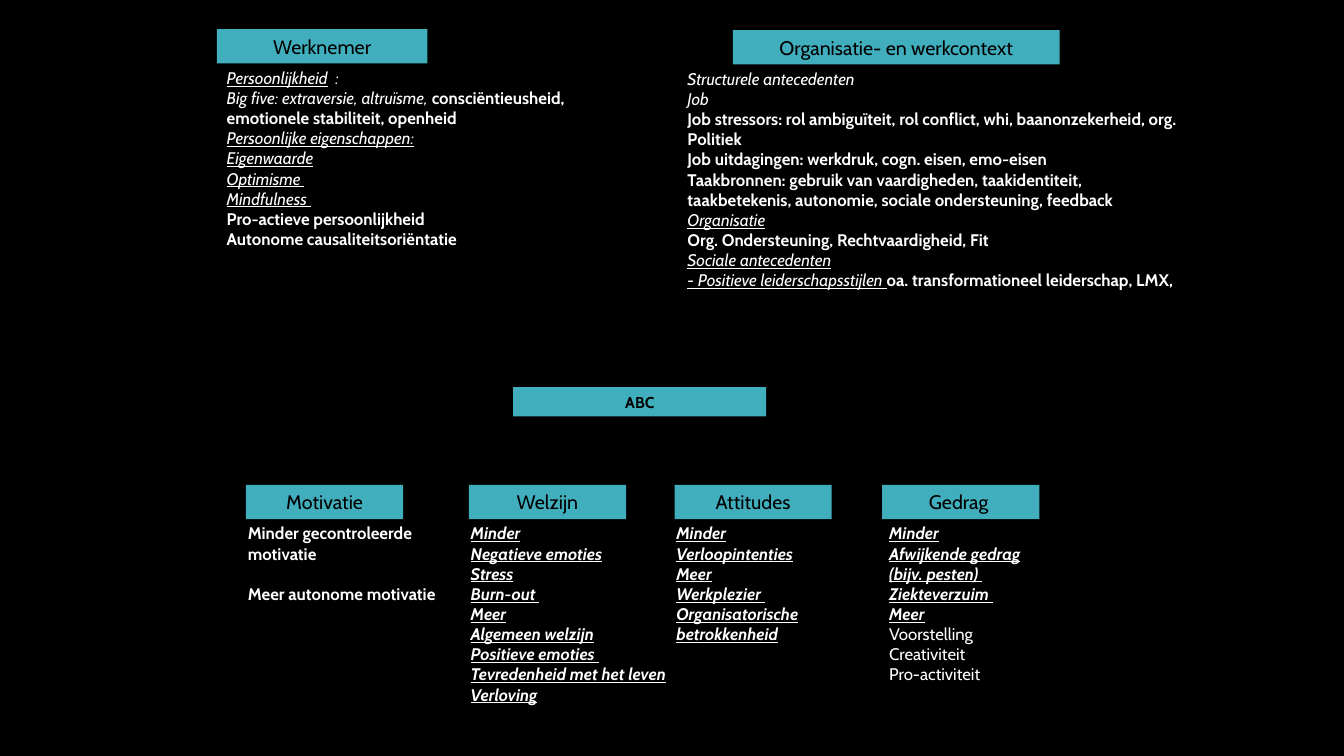
import pptx
import pptx.dml.color
import pptx.enum.shapes
import pptx.enum.text
import pptx.util

Inches = pptx.util.Inches
Pt = pptx.util.Pt

FONT = "Cabin"
BLACK, WHITE, TEAL = "000000", "FFFFFF", "41AEBD"
HEADING_HEIGHT = 0.34

ANTECEDENTS = [
    ((2.15, 0.29, 3.81, 2.45), 0, 2.09, "Werknemer", [
        [("Persoonlijkheid", "iu"), ("  :", "i")],
        [("Big five: extraversie, altruïsme, ", "i"),
         ("consciëntieusheid, emotionele stabiliteit, openheid", "b")],
        [("Persoonlijke eigenschappen:", "iu")],
        [("Eigenwaarde", "iu")],
        [("Optimisme ", "iu")],
        [("Mindfulness ", "iu")],
        [("Pro-actieve persoonlijkheid", "b")],
        [("Autonome causaliteitsoriëntatie", "b")],
    ]),
    ((6.72, 0.3, 5.11, 3.07), 0.55, 3.24, "Organisatie- en werkcontext", [
        [("Structurele antecedenten", "i")],
        [("Job", "i")],
        [("Job stressors: rol ambiguïteit, rol conflict, whi, "
          "baanonzekerheid, org. Politiek", "b")],
        [("Job uitdagingen: werkdruk, cogn. eisen, emo-eisen", "b")],
        [("Taakbronnen: gebruik van vaardigheden, taakidentiteit, "
          "taakbetekenis, autonomie, sociale ondersteuning, feedback", "b")],
        [("Organisatie", "iu")],
        [("Org. Ondersteuning, Rechtvaardigheid, Fit", "b")],
        [("Sociale antecedenten", "iu")],
        [("- Positieve leiderschapsstijlen ", "iu"),
         ("oa. transformationeel leiderschap, LMX,", "b")],
    ]),
]


def uniform(style, *lines):
    return [[(line, style)] for line in lines]


OUTCOMES = [
    ((2.36, 4.81, 2.25, 1.65), 0.08, 1.56, "Motivatie",
     uniform("b", "Minder gecontroleerde motivatie", "Meer autonome motivatie")),
    ((4.57, 4.81, 2.25, 2.45), 0.08, 1.56, "Welzijn",
     uniform("biu", "Minder", "Negatieve emoties", "Stress", "Burn-out ", "Meer",
             "Algemeen welzijn", "Positieve emoties ",
             "Tevredenheid met het leven", "Verloving")),
    ((6.61, 4.81, 1.82, 1.85), 0.08, 1.56, "Attitudes",
     uniform("biu", "Minder", "Verloopintenties", "Meer", "Werkplezier ",
             "Organisatorische betrokkenheid")),
    ((8.72, 4.81, 1.79, 2.25), 0.03, 1.56, "Gedrag ",
     uniform("biu", "Minder", "Afwijkende gedrag (bijv. pesten) ",
             "Ziekteverzuim ", "Meer")
     + uniform("", "Voorstelling", "Creativiteit", "Pro-activiteit")),
]


def rgb(value):
    return pptx.dml.color.RGBColor.from_string(value)


def add_run(paragraph, text, size, color, style=""):
    run = paragraph.add_run()
    run.text = text
    run.font.name = FONT
    run.font.size = Pt(size)
    run.font.color.rgb = rgb(color)
    run.font.bold = "b" in style
    run.font.italic = "i" in style
    run.font.underline = "u" in style


def add_heading(slide, box, text, size=14, style=""):
    heading = slide.shapes.add_shape(
        pptx.enum.shapes.MSO_SHAPE.RECTANGLE, *map(Inches, box))
    heading.shadow.inherit = False
    heading.fill.solid()
    heading.fill.fore_color.rgb = rgb(TEAL)
    heading.line.fill.background()
    heading.text_frame.word_wrap = True
    heading.text_frame.vertical_anchor = pptx.enum.text.MSO_ANCHOR.MIDDLE
    paragraph = heading.text_frame.paragraphs[0]
    paragraph.alignment = pptx.enum.text.PP_ALIGN.CENTER
    add_run(paragraph, text, size, BLACK, style)


def add_factor(slide, box, indent, heading_width, title, lines, gap=0):
    left, top, width, height = box
    body_top = top + HEADING_HEIGHT - 0.01
    add_heading(slide, (left + indent, top, heading_width, HEADING_HEIGHT), title)
    body = slide.shapes.add_textbox(
        Inches(left), Inches(body_top), Inches(width),
        Inches(height - HEADING_HEIGHT + 0.01)).text_frame
    body.word_wrap = True
    for index, line in enumerate(lines):
        paragraph = body.add_paragraph() if index else body.paragraphs[0]
        if index and gap:
            paragraph.space_before = Pt(gap)
        for text, style in line:
            add_run(paragraph, text, 12, WHITE, style)


def build_slide(presentation):
    slide = presentation.slides.add_slide(presentation.slide_layouts[6])
    slide.background.fill.solid()
    slide.background.fill.fore_color.rgb = rgb(BLACK)
    for factor in ANTECEDENTS:
        add_factor(slide, *factor)
    add_heading(slide, (5.09, 3.84, 2.51, 0.29), "ABC", 11.2, "b")
    motivation, *other_outcomes = OUTCOMES
    add_factor(slide, *motivation, gap=14.5)
    for outcome in other_outcomes:
        add_factor(slide, *outcome)


def main():
    presentation = pptx.Presentation()
    presentation.slide_width = Inches(13.33)
    presentation.slide_height = Inches(7.5)
    build_slide(presentation)
    presentation.save("out.pptx")


if __name__ == "__main__":
    main()
